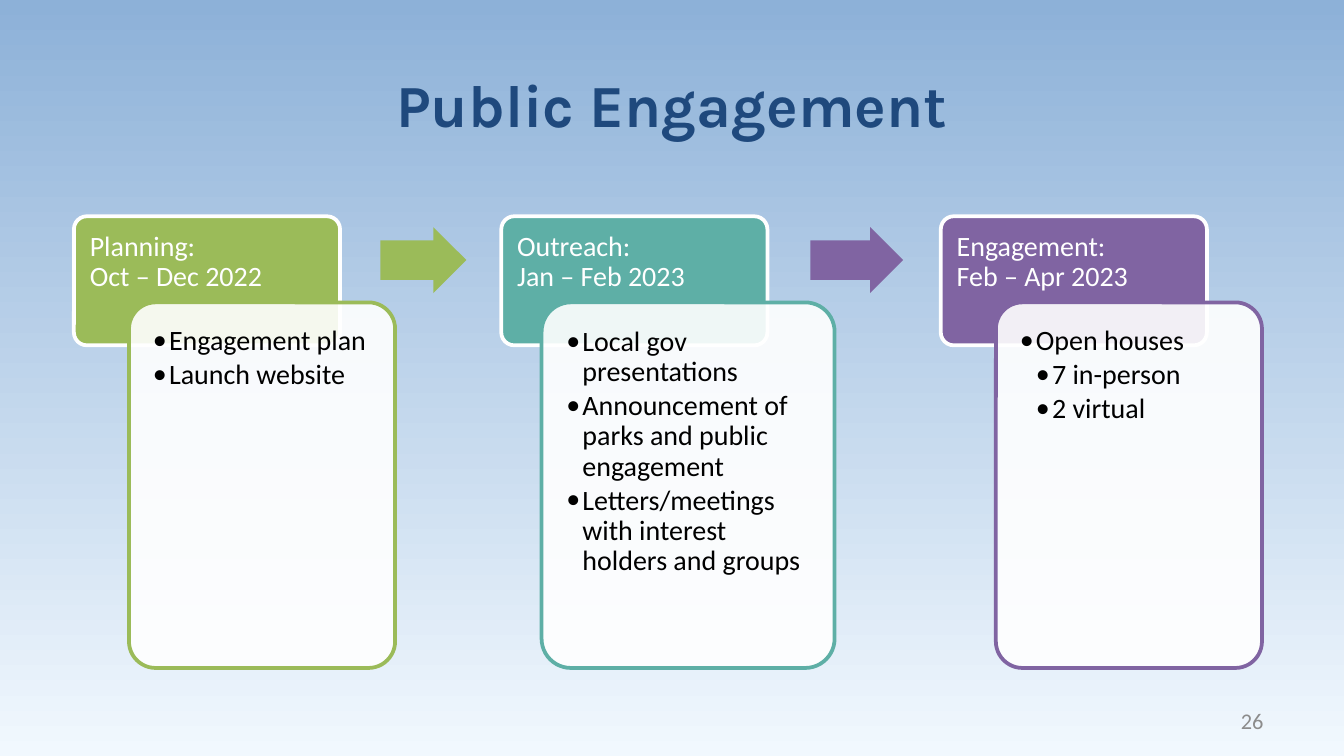
import pptx
import pptx.util
import pptx.dml.color
import pptx.enum.shapes
import pptx.enum.text
import pptx.oxml
import pptx.oxml.ns
from lxml import etree

Inches, Pt = pptx.util.Inches, pptx.util.Pt
RGB = pptx.dml.color.RGBColor.from_string
SHAPE = pptx.enum.shapes.MSO_SHAPE
ANCHOR = pptx.enum.text.MSO_ANCHOR
ALIGN = pptx.enum.text.PP_ALIGN
qn = pptx.oxml.ns.qn

COLORS = {
    "sky": "8DB1D8", "mist": "F1F8FE", "title": "1F497D",
    "green": "9BBB59", "teal": "5EAFA6", "purple": "8064A2",
    "white": "FFFFFF", "black": "000000", "gray": "8C8C8C",
}

# Widescreen 16:9
prs = pptx.Presentation()
prs.slide_width = Inches(10)
prs.slide_height = Inches(10 * 9 / 16)
s = prs.slides.add_slide(prs.slide_layouts[5])


def add_shape(kind, x, y, w, h, fill, line=None):
    sp = s.shapes.add_shape(kind, Inches(x), Inches(y), Inches(w), Inches(h))
    sp.shadow.inherit = False
    sp.fill.solid()
    sp.fill.fore_color.rgb = RGB(COLORS[fill])
    if line:
        sp.line.color.rgb = RGB(COLORS[line])
        sp.line.width = Pt(2)
    else:
        sp.line.fill.background()
    return sp


def format_text(tf, size, color, inset, anchor, align, font="Calibri"):
    tf.word_wrap = True
    tf.vertical_anchor = anchor
    tf.margin_left = tf.margin_right = Inches(inset)
    tf.margin_top = tf.margin_bottom = Inches(inset)
    for p in tf.paragraphs:
        p.alignment = align
        for r in p.runs:
            r.font.name, r.font.size = font, Pt(size)
            r.font.color.rgb = RGB(COLORS[color])


# Background gradient, top to bottom
fill = s.background.fill
fill.gradient()
fill.gradient_angle = 270
for stop, position, name in zip(fill.gradient_stops, (0, 1), ("sky", "mist")):
    stop.position = position
    stop.color.rgb = RGB(COLORS[name])

# Title
title = s.shapes.title
title.left, title.top = Inches(0.69), Inches(0.54)
title.width, title.height = Inches(8.62), Inches(0.46)
title.text_frame.text = "Public Engagement"
format_text(title.text_frame, 32, "title", 0, ANCHOR.MIDDLE, ALIGN.CENTER, "Karla")
title.text_frame.paragraphs[0].runs[0].font.bold = True

# Phases: header, color, header x, card x, card width, (level, item) list
phases = [
    ("Planning: \vOct – Dec 2022", "green", 0.55, 0.96, 1.98,
     [(1, "Engagement plan"), (1, "Launch website")]),
    ("Outreach: \vJan – Feb 2023", "teal", 3.73, 4.03, 2.18,
     [(1, "Local gov presentations"),
      (1, "Announcement of parks and public engagement"),
      (1, "Letters/meetings with interest holders and groups")]),
    ("Engagement: \vFeb – Apr 2023", "purple", 7, 7.41, 1.98,
     [(1, "Open houses"), (2, "7 in-person"), (2, "2 virtual")]),
]
for heading, color, head_x, card_x, card_w, items in phases:
    # Header block
    sp = add_shape(SHAPE.ROUNDED_RECTANGLE, head_x, 1.61, 1.98, 0.96, color, "white")
    sp.adjustments[0] = 0.1
    sp.text_frame.text = heading
    sp.text_frame.paragraphs[0].line_spacing = 0.9
    format_text(sp.text_frame, 15, "white", 0.09, ANCHOR.TOP, ALIGN.LEFT)

    # Translucent card with bullets
    sp = add_shape(SHAPE.ROUNDED_RECTANGLE, card_x, 2.25, card_w, 2.72, "white", color)
    sp.adjustments[0] = 0.1
    clr = sp._element.spPr.find(qn("a:solidFill"))[0]
    etree.SubElement(clr, qn("a:alpha")).set("val", "90000")
    tf = sp.text_frame
    tf.text = "\n".join(item for level, item in items)
    for p, (level, item) in zip(tf.paragraphs, items):
        p.level = level
        p.line_spacing = 0.9
        p.space_after = Pt(2)
        pPr = p._p.get_or_add_pPr()
        pPr.set("marL", str(Inches(0.12 * level)))
        pPr.set("indent", str(Inches(-0.12)))
        etree.SubElement(pPr, qn("a:buFont")).set("typeface", "Calibri")
        etree.SubElement(pPr, qn("a:buChar")).set("char", "•")
    format_text(tf, 15, "black", 0.12, ANCHOR.TOP, ALIGN.LEFT)

# Arrows between phases
for x, w, color in [(2.83, 0.64, "green"), (6.03, 0.69, "purple")]:
    sp = add_shape(SHAPE.RIGHT_ARROW, x, 1.69, w, 0.49, color)
    sp.adjustments[0] = 0.6
    sp.adjustments[1] = 0.5

# Slide number
tb = s.shapes.add_textbox(Inches(7.17), Inches(5.21), Inches(2.33), Inches(0.3))
tb.text_frame.text = "26"
format_text(tb.text_frame, 12, "gray", 0.1, ANCHOR.MIDDLE, ALIGN.RIGHT)

prs.save("out.pptx")
